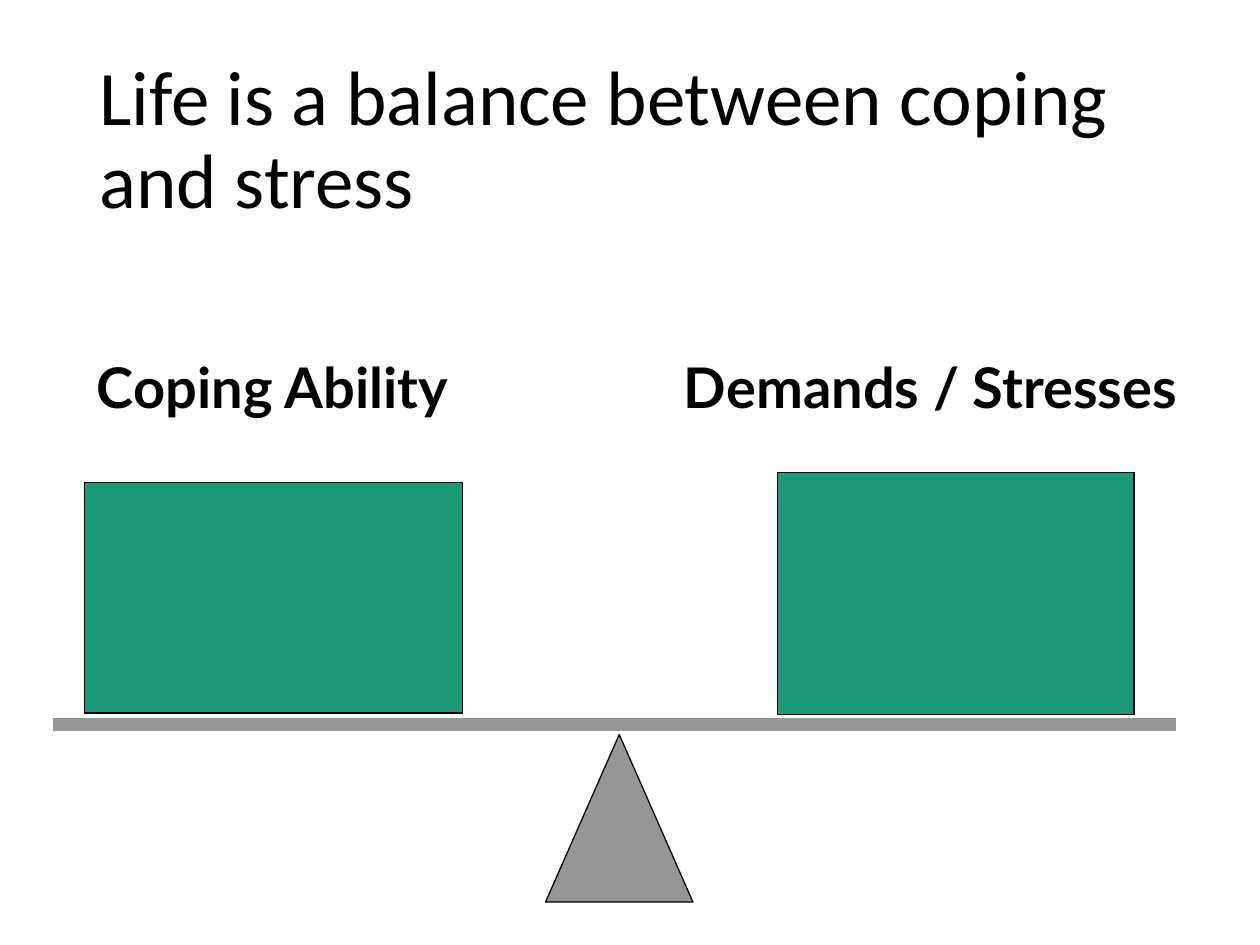
from lxml import etree
from pptx import Presentation
from pptx.dml.color import RGBColor
from pptx.enum.shapes import MSO_CONNECTOR, MSO_SHAPE
from pptx.enum.text import MSO_ANCHOR, MSO_AUTO_SIZE, PP_ALIGN
from pptx.oxml.ns import qn
from pptx.util import Inches, Pt

BLACK, GREY, GREEN = "000000", "969696", "1D9A78"


def color(value):
    return RGBColor.from_string(value)


def add_run(paragraph, text, font_name, size, bold=False):
    paragraph.alignment = PP_ALIGN.LEFT
    run = paragraph.add_run()
    run.text = text
    run.font.name = font_name
    run.font.size = Pt(size)
    run.font.bold = bold
    run.font.color.rgb = color(BLACK)


presentation = Presentation()
presentation.slide_width, presentation.slide_height = Inches(10), Inches(7.5)
slide = presentation.slides.add_slide(presentation.slide_layouts[5])

# Title
title = slide.shapes.title
title.left, title.top = Inches(0.69), Inches(0.4)
title.width, title.height = Inches(8.62), Inches(1.45)
title.text_frame.word_wrap = True
title.text_frame.auto_size = MSO_AUTO_SIZE.NONE
title.text_frame.vertical_anchor = MSO_ANCHOR.MIDDLE
heading = title.text_frame.paragraphs[0]
heading.line_spacing = 0.9
add_run(heading, "Life is a balance between coping and stress", "Calibri", 44)

# Beam of the scale
beam = slide.shapes.add_connector(
    MSO_CONNECTOR.STRAIGHT, Inches(0.42), Inches(5.75), Inches(9.33), Inches(5.75))
beam.line.color.rgb = color(GREY)
beam.line.width = Pt(7.5)
etree.SubElement(beam.element.spPr, qn("a:effectLst"))

# Pivot and the two weights
for preset, fill, left, top, width, height in [
    (MSO_SHAPE.ISOSCELES_TRIANGLE, GREY, 4.33, 5.83, 1.17, 1.33),
    (MSO_SHAPE.RECTANGLE, GREEN, 0.67, 3.83, 3, 1.83),
    (MSO_SHAPE.RECTANGLE, GREEN, 6.17, 3.75, 2.83, 1.92),
]:
    part = slide.shapes.add_shape(
        preset, Inches(left), Inches(top), Inches(width), Inches(height))
    part.shadow.inherit = False
    part.fill.solid()
    part.fill.fore_color.rgb = color(fill)
    part.line.color.rgb = color(BLACK)
    part.line.width = Pt(0.75)

# Labels above the weights
for text, left, width, wraps in [
    ("Demands / Stresses", 5.33, 4.25, True),
    ("Coping Ability", 0.67, 3.09, False),
]:
    label = slide.shapes.add_textbox(
        Inches(left), Inches(2.75), Inches(width), Inches(0.63))
    label.text_frame.word_wrap = wraps
    label.text_frame.auto_size = MSO_AUTO_SIZE.SHAPE_TO_FIT_TEXT
    add_run(label.text_frame.paragraphs[0], text, "Lato", 32, bold=True)

presentation.save("out.pptx")
